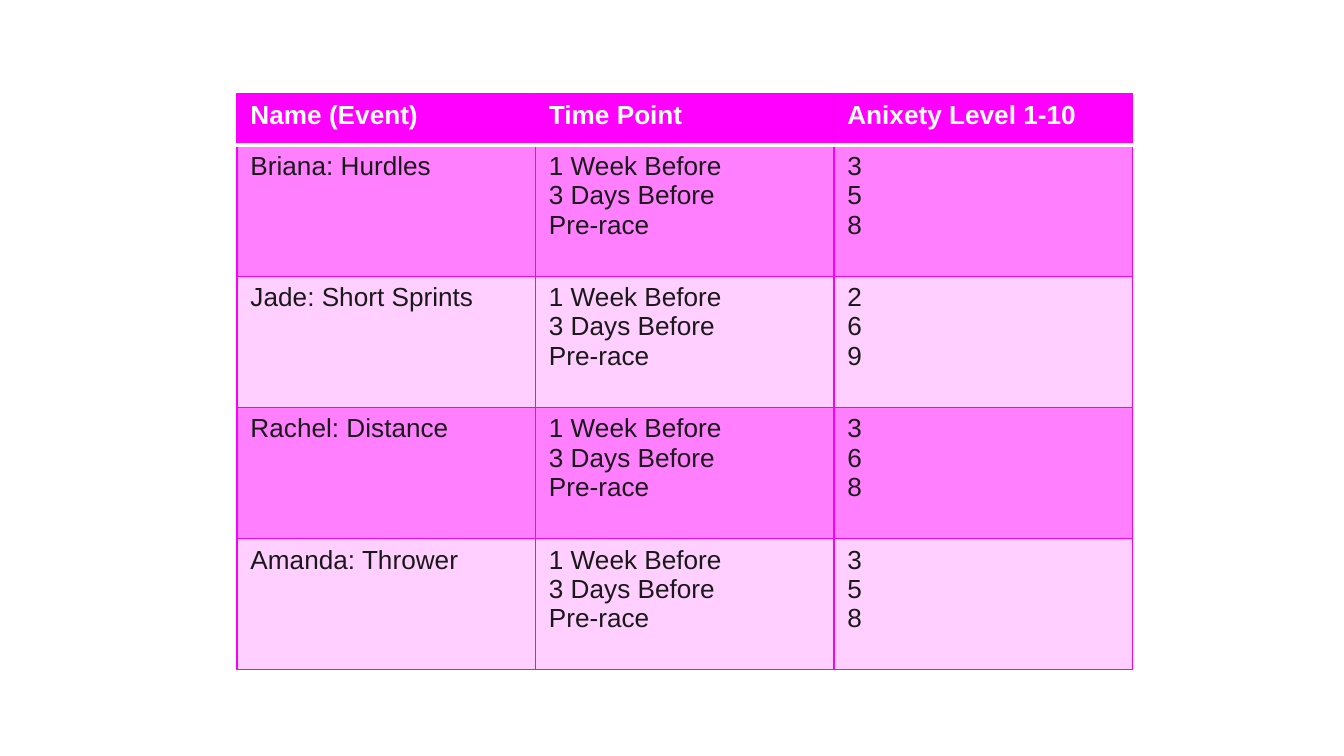
from lxml import etree
from pptx import Presentation
from pptx.dml.color import RGBColor
from pptx.oxml.ns import qn
from pptx.util import Cm, Pt

# Content
HEADERS = ("Name (Event)", "Time Point", "Anixety Level 1-10")
TIME_POINTS = ("1 Week Before", "3 Days Before", "Pre-race")
ATHLETES = (
    ("Briana: Hurdles", (3, 5, 8)),
    ("Jade: Short Sprints", (2, 6, 9)),
    ("Rachel: Distance", (3, 6, 8)),
    ("Amanda: Thrower", (3, 5, 8)),
)

# Look
MAGENTA = RGBColor(0xFF, 0x00, 0xFF)
BANDS = (RGBColor(0xFF, 0x7F, 0xFF), RGBColor(0xFF, 0xCF, 0xFF))
GRID = RGBColor(0xF9, 0x00, 0xF9)
WHITE = RGBColor(0xFF, 0xFF, 0xFF)
INK = RGBColor(0x19, 0x19, 0x19)
FONT = "Arial"
TEXT_SIZE = Pt(14)
GRID_LINE = (GRID, Pt(0.75))
HEADER_LINE = (WHITE, Pt(2))

# Layout
LEFT, TOP = Cm(4.48), Cm(1.77)
COLUMN_WIDTH = Cm(5.64)
HEADER_HEIGHT, BODY_HEIGHT = Cm(0.97), Cm(2.48)


def set_borders(cell, top, bottom):
    """Draw all four edges of a cell; the sides take the grid line."""
    properties = cell._tc.get_or_add_tcPr()
    edges = (("a:lnL", GRID_LINE), ("a:lnR", GRID_LINE),
             ("a:lnT", top), ("a:lnB", bottom))
    for tag, (color, width) in edges:
        line = etree.SubElement(properties, qn(tag), w=str(width))
        fill = etree.SubElement(line, qn("a:solidFill"))
        etree.SubElement(fill, qn("a:srgbClr"), val=str(color))


def fill_cell(cell, lines, background, color, bold):
    cell.fill.solid()
    cell.fill.fore_color.rgb = background
    cell.text_frame.text = "\n".join(str(line) for line in lines)
    for paragraph in cell.text_frame.paragraphs:
        font = paragraph.font
        font.name, font.size, font.bold = FONT, TEXT_SIZE, bold
        font.color.rgb = color


prs = Presentation()
prs.slide_width, prs.slide_height = Cm(25.4), Cm(14.29)
slide = prs.slides.add_slide(prs.slide_layouts[6])

# Anxiety table
rows = [[(header,) for header in HEADERS]]
rows += [[(name,), TIME_POINTS, levels] for name, levels in ATHLETES]
table = slide.shapes.add_table(
    len(rows), len(HEADERS), LEFT, TOP, COLUMN_WIDTH * len(HEADERS),
    HEADER_HEIGHT + BODY_HEIGHT * len(ATHLETES)).table
for column in table.columns:
    column.width = COLUMN_WIDTH

for r, row in enumerate(rows):
    is_header = r == 0
    table.rows[r].height = HEADER_HEIGHT if is_header else BODY_HEIGHT
    background = MAGENTA if is_header else BANDS[(r - 1) % 2]
    top = HEADER_LINE if r == 1 else GRID_LINE
    bottom = HEADER_LINE if is_header else GRID_LINE
    for c, lines in enumerate(row):
        cell = table.cell(r, c)
        set_borders(cell, top, bottom)
        fill_cell(cell, lines, background, WHITE if is_header else INK, is_header)

prs.save("out.pptx")
